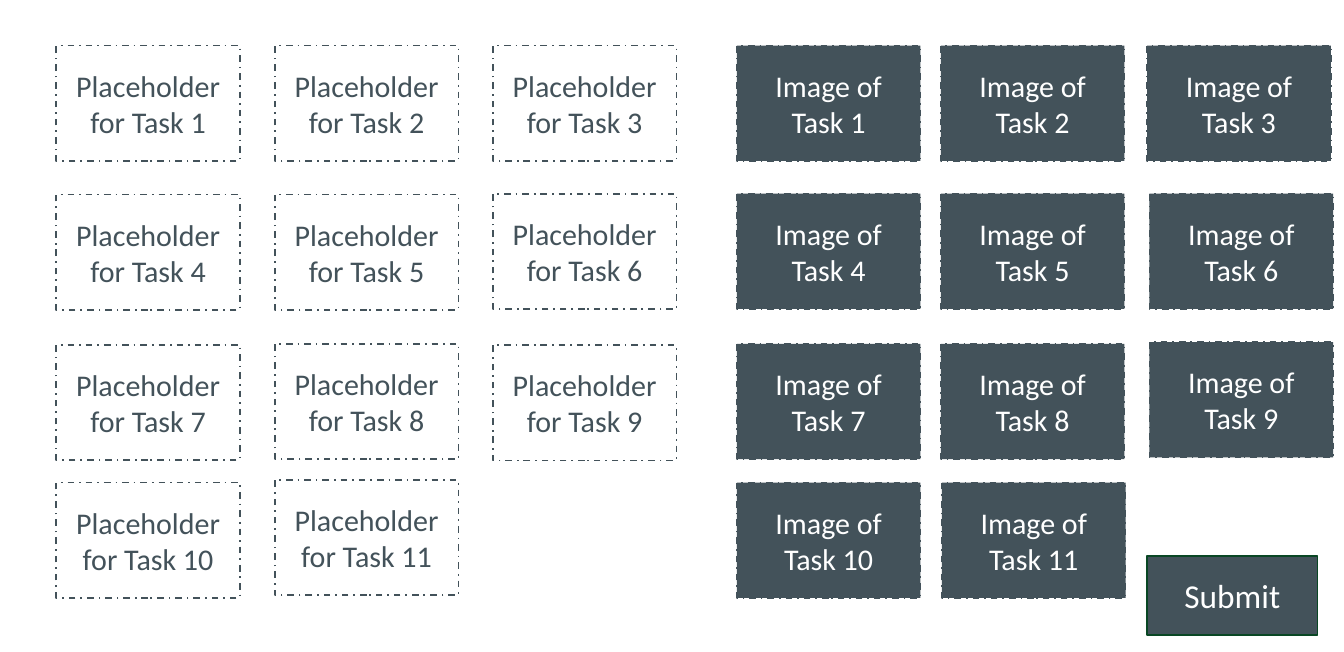
import pptx
import pptx.dml.color
import pptx.enum.dml
import pptx.enum.shapes
import pptx.enum.text
import pptx.util
from dataclasses import dataclass

Pt = pptx.util.Pt

TASK_COUNT = 11
COLUMN_COUNT = 3
ROW_TOPS = (27.4, 116.2, 206.2, 289.4)
CARD_SIZE = (110.2, 69.1)

# Nudges shift single cards off the grid: task number -> (right, down)
BOARDS = (
    {"label": "Placeholder for Task", "fill": "white", "text": "slate",
     "lefts": (33.8, 164.9, 295.7),
     "nudges": {4: (0, 0.5), 5: (0, 0.5), 7: (0, 0.5), 9: (0, 0.8), 11: (0, -1.5)}},
    {"label": "Image of Task", "fill": "slate", "text": "white",
     "lefts": (442.1, 564.5, 688.3),
     "nudges": {6: (1.4, 0), 9: (1.4, -1), 11: (0.7, 0)}},
)
SUBMIT = {"label": "Submit", "at": (688.3, 333.4, 102.2, 47.5)}


@dataclass(frozen=True)
class Theme:
    white: str = "FFFFFF"
    slate: str = "43525A"
    green: str = "094724"
    font: str = "Calibri"
    card_size: int = 18
    button_size: int = 20
    line_width: int = 1

    def color(self, name):
        return pptx.dml.color.RGBColor.from_string(getattr(self, name))


THEME = Theme()


def add_box(page, label, at, fill, text, line, size, dash=None):
    box = page.shapes.add_shape(
        pptx.enum.shapes.MSO_SHAPE.RECTANGLE, *(Pt(length) for length in at))
    box.shadow.inherit = False
    box.fill.solid()
    box.fill.fore_color.rgb = THEME.color(fill)
    box.line.color.rgb = THEME.color(line)
    box.line.width = Pt(THEME.line_width)
    if dash is not None:
        box.line.dash_style = dash

    frame = box.text_frame
    frame.word_wrap = True
    frame.vertical_anchor = pptx.enum.text.MSO_ANCHOR.MIDDLE
    para = frame.paragraphs[0]
    para.alignment = pptx.enum.text.PP_ALIGN.CENTER
    span = para.add_run()
    span.text = label
    span.font.name = THEME.font
    span.font.size = Pt(size)
    span.font.color.rgb = THEME.color(text)


def add_board(page, board):
    """Lay out one numbered card per task, row by row."""
    for index in range(TASK_COUNT):
        task = index + 1
        row, column = divmod(index, COLUMN_COUNT)
        right, down = board["nudges"].get(task, (0, 0))
        at = (board["lefts"][column] + right, ROW_TOPS[row] + down, *CARD_SIZE)
        add_box(page, f"{board['label']} {task}", at, board["fill"], board["text"],
                "slate", THEME.card_size, pptx.enum.dml.MSO_LINE.DASH_DOT)


def main():
    deck = pptx.Presentation()
    deck.slide_width, deck.slide_height = Pt(806.4), Pt(390.96)
    page = deck.slides.add_slide(deck.slide_layouts[6])
    add_box(page, SUBMIT["label"], SUBMIT["at"], "slate", "white", "green",
            THEME.button_size)
    for board in BOARDS:
        add_board(page, board)
    deck.save("out.pptx")


if __name__ == "__main__":
    main()
